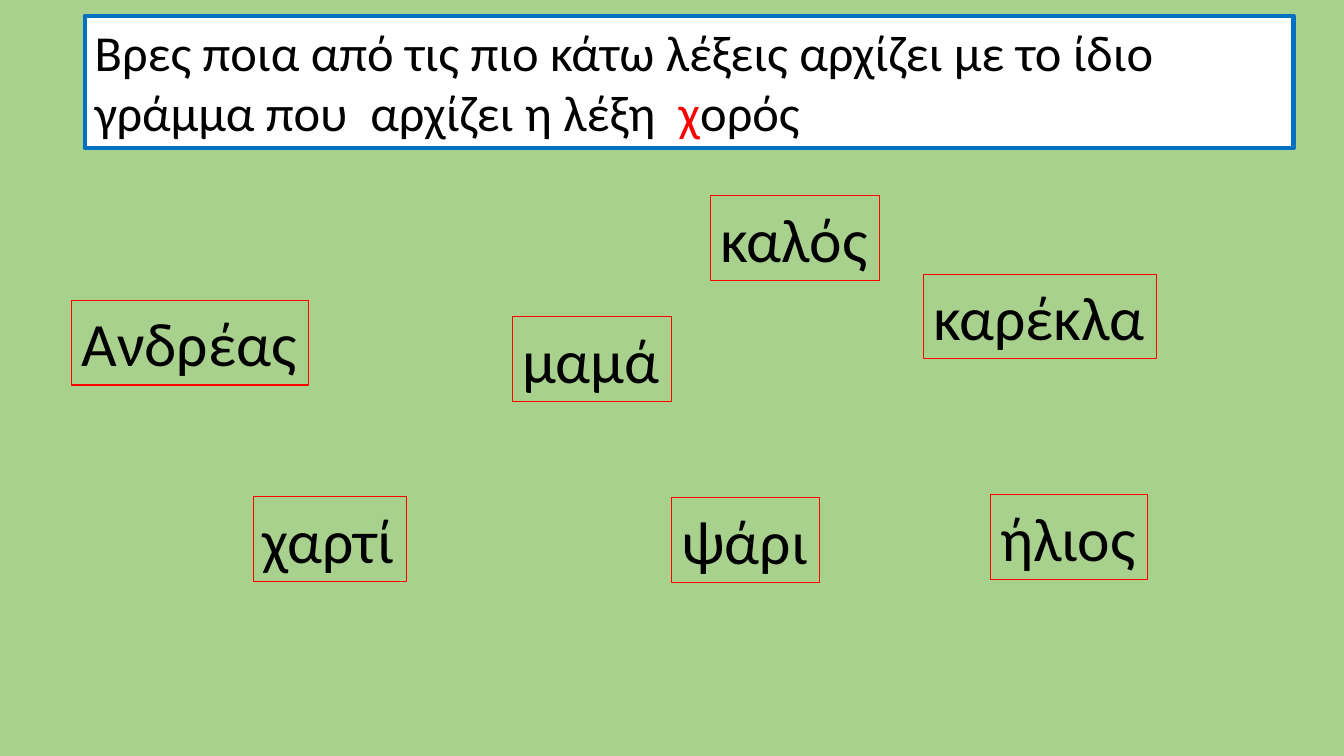
"""Builds a Greek first-letter exercise slide with a question and word boxes."""
from pptx import Presentation
from pptx.dml.color import RGBColor
from pptx.enum.text import MSO_AUTO_SIZE
from pptx.util import Inches, Pt

FIT_SHAPE = MSO_AUTO_SIZE.SHAPE_TO_FIT_TEXT
FONT = "Calibri"
GREEN, WHITE, BLACK = "A9D18E", "FFFFFF", "000000"
BLUE, RED = "0070C0", "FF0000"
WORD_HEIGHT = 0.84

QUESTION = [
    ("Βρες ποια από τις πιο κάτω λέξεις αρχίζει με το ίδιο "
     "γράμμα που  αρχίζει η λέξη  ", BLACK),
    ("χ", RED),
    ("ορός", BLACK),
]
WORDS = [
    ("Ανδρέας", 0.71, 2.98, 2.35),
    ("χαρτί", 2.51, 4.93, 1.52),
    ("ψάρι", 6.66, 4.94, 1.47),
    ("καρέκλα", 9.16, 2.72, 2.31),
    ("μαμά", 5.08, 3.14, 1.58),
    ("ήλιος", 9.82, 4.91, 1.56),
    ("καλός", 7.05, 1.94, 1.67),
]


def set_fill(fill, color):
    """Fill with a solid hex colour."""
    fill.solid()
    fill.fore_color.rgb = RGBColor.from_string(color)


def add_run(p, text, size=44, color=BLACK):
    """Append formatted text to a paragraph."""
    r = p.add_run()
    r.text = text
    r.font.name = FONT
    r.font.size = Pt(size)
    set_fill(r.font.fill, color)


def add_box(s, x, y, w, h, line, weight=0.75, wrap=False):
    """Add an outlined text box and return it."""
    sp = s.shapes.add_textbox(Inches(x), Inches(y), Inches(w), Inches(h))
    set_fill(sp.line.fill, line)
    sp.line.width = Pt(weight)
    tf = sp.text_frame
    tf.word_wrap = wrap
    tf.auto_size = FIT_SHAPE
    return sp


def add_question(s):
    """Add the white question panel."""
    sp = add_box(s, 0.84, 0.16, 11.99, 1.31, BLUE, weight=3, wrap=True)
    set_fill(sp.fill, WHITE)
    for text, color in QUESTION:
        add_run(sp.text_frame.paragraphs[0], text, size=36, color=color)


def add_word(s, word, x, y, w):
    """Add one answer word in a red frame."""
    sp = add_box(s, x, y, w, WORD_HEIGHT, RED)
    add_run(sp.text_frame.paragraphs[0], word)


def main():
    """Build and save the slide."""
    prs = Presentation()
    prs.slide_width, prs.slide_height = Inches(13.33), Inches(7.5)
    s = prs.slides.add_slide(prs.slide_layouts[6])
    set_fill(s.background.fill, GREEN)
    add_question(s)
    for word in WORDS:
        add_word(s, *word)
    prs.save("out.pptx")


if __name__ == "__main__":
    main()
